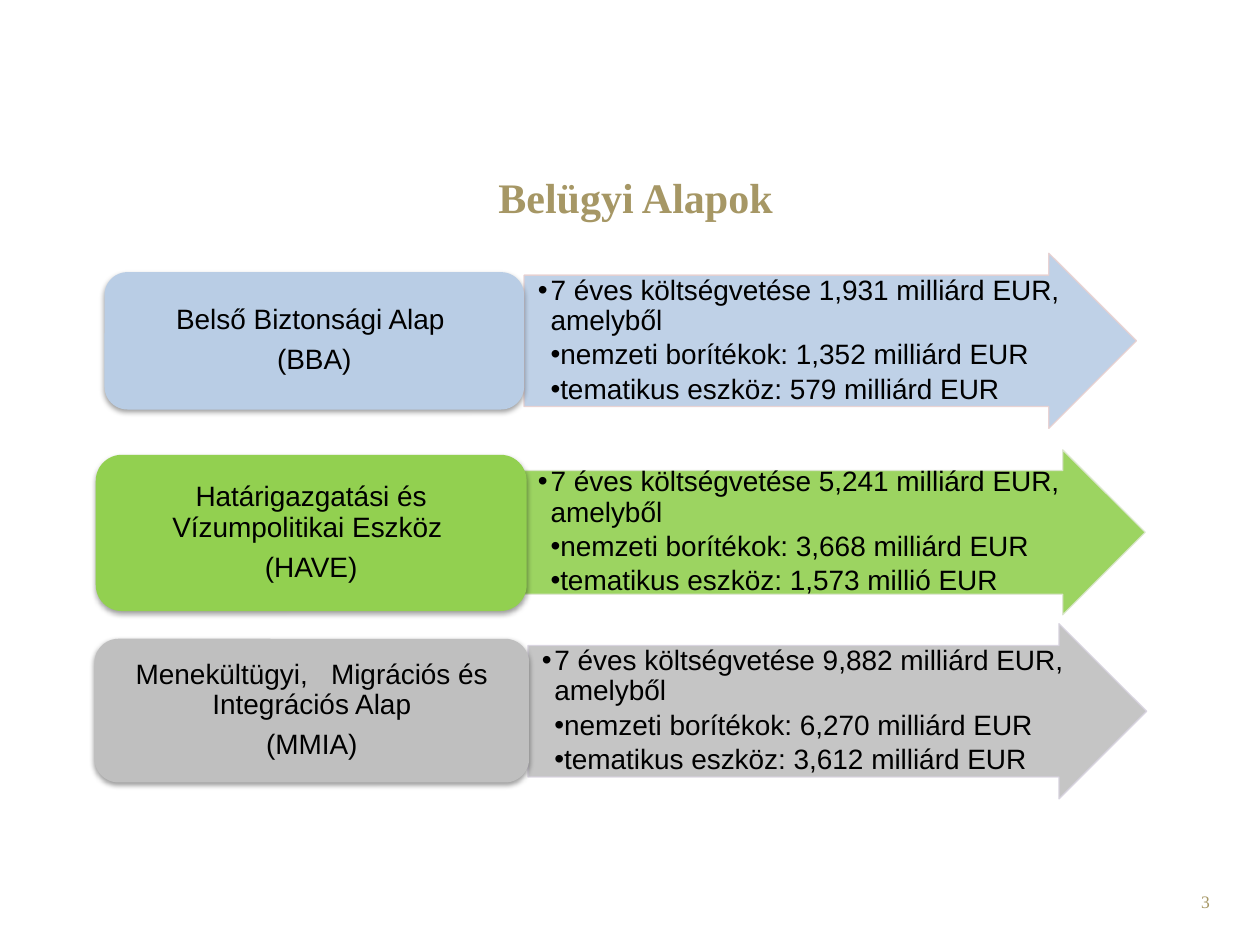
"""Builds the slide on the three home affairs funds and their seven-year budgets."""
from dataclasses import dataclass

from lxml.etree import SubElement
from pptx import Presentation
from pptx.dml.color import RGBColor
from pptx.enum.shapes import MSO_SHAPE
from pptx.enum.text import MSO_ANCHOR, PP_ALIGN
from pptx.oxml import parse_xml
from pptx.oxml.ns import nsdecls, qn
from pptx.util import Inches, Pt


@dataclass(frozen=True)
class Theme:
    gold: str = "A69765"
    black: str = "000000"
    blue: str = "B9CDE5"
    green: str = "92D050"
    grey: str = "BFBFBF"
    blue_edge: str = "E8D0D0"
    green_edge: str = "DEE7D1"
    grey_edge: str = "D8D3E0"
    heading_font: str = "Times New Roman"
    body_font: str = "Arial"
    title_size: int = 24
    body_size: int = 16
    number_size: int = 10


theme = Theme()


def add_text(paragraph, text, font_name, size, color, bold=False):
    run = paragraph.add_run()
    run.text = text
    run.font.name = font_name
    run.font.size = Pt(size)
    run.font.bold = bold
    run.font.color.rgb = RGBColor.from_string(color)


def fill_frame(shape, lines, alignment, space_after, margins, bullet_indents=None):
    frame = shape.text_frame
    frame.word_wrap = True
    frame.vertical_anchor = MSO_ANCHOR.MIDDLE
    frame.margin_left = frame.margin_right = Inches(margins[0])
    frame.margin_top = frame.margin_bottom = Inches(margins[1])
    for index, line in enumerate(lines):
        paragraph = frame.paragraphs[0] if index == 0 else frame.add_paragraph()
        paragraph.alignment = alignment
        paragraph.line_spacing = 0.9
        paragraph.space_after = Pt(space_after)
        if bullet_indents:
            paragraph.level = 1
            properties = paragraph._p.get_or_add_pPr()
            properties.set("marL", str(Inches(0.2)))
            properties.set("indent", str(Inches(bullet_indents[index])))
            SubElement(properties, qn("a:buFont")).set("typeface", theme.body_font)
            SubElement(properties, qn("a:buChar")).set("char", "•")
        add_text(paragraph, line, theme.body_font, theme.body_size, theme.black)


presentation = Presentation()
presentation.slide_width = Inches(10)
presentation.slide_height = Inches(7.5)
slide = presentation.slides.add_slide(presentation.slide_layouts[6])

number_box = slide.shapes.add_textbox(Inches(7.37), Inches(7.02), Inches(2.33), Inches(0.4))
number_box.text_frame.word_wrap = True
number_paragraph = number_box.text_frame.paragraphs[0]
number_paragraph.alignment = PP_ALIGN.RIGHT
add_text(number_paragraph, "3", theme.heading_font, theme.number_size, theme.gold)

title_box = slide.shapes.add_textbox(Inches(0.83), Inches(0.84), Inches(8.43), Inches(1.04))
title_box.text_frame.word_wrap = True
title_box.text_frame.vertical_anchor = MSO_ANCHOR.BOTTOM
title_box.text_frame.margin_bottom = Inches(0.12)
title_paragraph = title_box.text_frame.paragraphs[0]
title_paragraph.alignment = PP_ALIGN.CENTER
add_text(title_paragraph, "Belügyi Alapok", theme.heading_font, theme.title_size, theme.gold, True)

funds = [
    (["Belső Biztonsági Alap ", "(BBA)"],
     "1,931 milliárd", "1,352 milliárd", "579 milliárd", theme.blue, theme.blue_edge,
     (4.16, 2.01, 4.86, 1.39), (0.83, 2.16, 3.33, 1.09)),
    (["Határigazgatási és Vízumpolitikai Eszköz ", "(HAVE)"],
     "5,241 milliárd", "3,668 milliárd", "1,573 millió", theme.green, theme.green_edge,
     (4.16, 3.57, 4.93, 1.31), (0.76, 3.61, 3.42, 1.24)),
    (["Menekültügyi,   Migrációs és Integrációs Alap", "(MMIA)"],
     "9,882 milliárd", "6,270 milliárd", "3,612 milliárd", theme.grey, theme.grey_edge,
     (4.19, 4.95, 4.91, 1.39), (0.75, 5.07, 3.45, 1.14)),
]

for name, total, national, thematic, color, edge, arrow_place, label_place in funds:
    arrow = slide.shapes.add_shape(MSO_SHAPE.RIGHT_ARROW, *map(Inches, arrow_place))
    arrow.adjustments[0] = 0.75
    arrow.adjustments[1] = 0.5
    arrow.shadow.inherit = False
    arrow.fill.solid()
    arrow.fill.fore_color.rgb = RGBColor.from_string(color)
    arrow.line.color.rgb = RGBColor.from_string(edge)
    arrow.line.width = Pt(0.75)
    for color_element in arrow._element.spPr.iter(qn("a:srgbClr")):
        SubElement(color_element, qn("a:alpha")).set("val", "90000")
    budget = [
        f"7 éves költségvetése {total} EUR, amelyből",
        f"nemzeti borítékok: {national} EUR",
        f"tematikus eszköz: {thematic} EUR",
    ]
    fill_frame(arrow, budget, PP_ALIGN.LEFT, 2.4, (0.01, 0.01), (-0.1, 0, 0))

    label = slide.shapes.add_shape(MSO_SHAPE.ROUNDED_RECTANGLE, *map(Inches, label_place))
    label.fill.solid()
    label.fill.fore_color.rgb = RGBColor.from_string(color)
    label.line.fill.background()
    label._element.spPr.append(parse_xml(
        f'<a:effectLst {nsdecls("a")}>'
        '<a:outerShdw blurRad="40000" dist="20000" dir="5400000" rotWithShape="0">'
        f'<a:srgbClr val="{theme.black}"><a:alpha val="38000"/></a:srgbClr>'
        '</a:outerShdw></a:effectLst>'))
    fill_frame(label, name, PP_ALIGN.CENTER, 5.6, (0.07, 0.03))

presentation.save("out.pptx")
